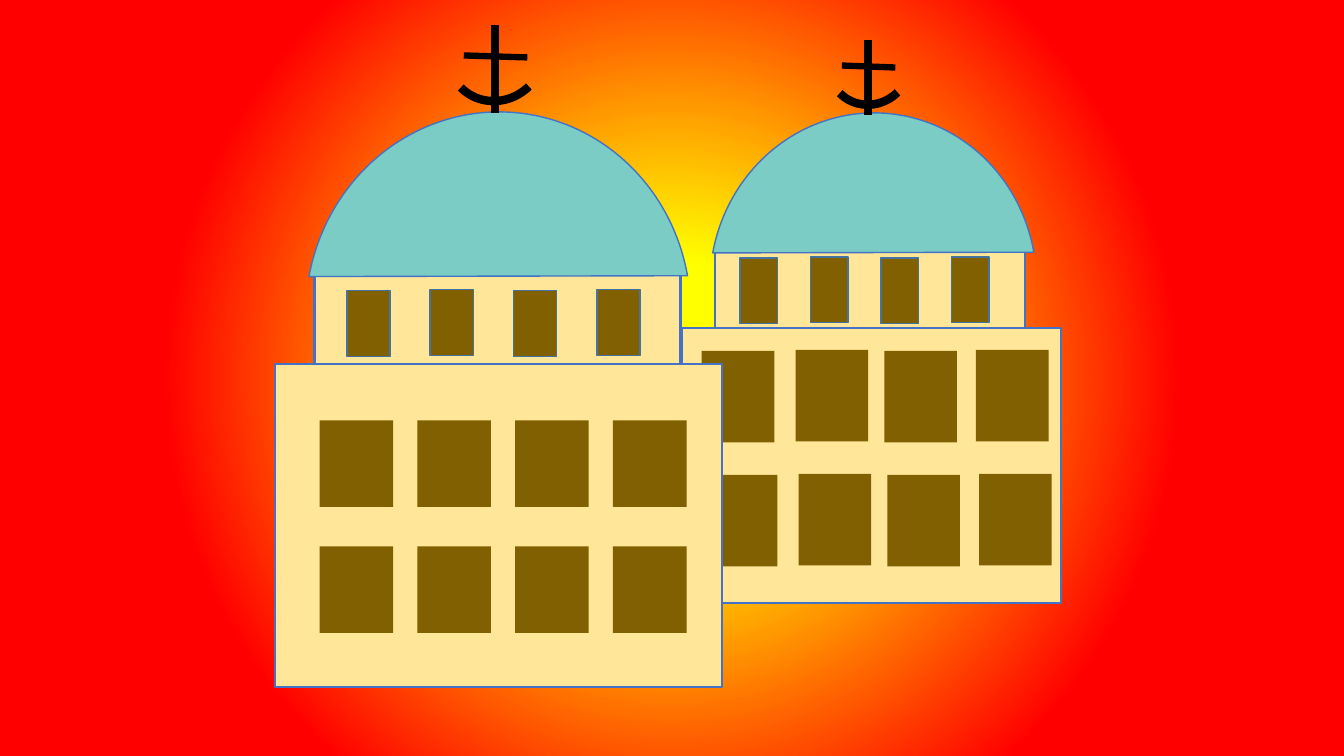
from lxml import etree
from pptx import Presentation
from pptx import util as u
from pptx.dml.color import RGBColor
from pptx.enum import shapes
from pptx.oxml.ns import qn

WALL, GLASS, DOME, BLACK = "FFE699", "806000", "7ACCC4", "000000"
EDGE, FRAME = "4472C4", "43739E"


def rgb(value):
    return RGBColor.from_string(value)


class Scene:
    def __init__(self, prs):
        self.s = prs.slides.add_slide(prs.slide_layouts[6])
        self.grp = None

    def sky(self, stops):
        fill = self.s.background.fill
        fill.gradient()
        for stop, (position, color) in zip(fill.gradient_stops, stops):
            stop.position = position
            stop.color.rgb = rgb(color)
        lin = self.s.element.find(".//" + qn("a:lin"))
        circle = etree.Element(qn("a:path"), {"path": "circle"})
        etree.SubElement(circle, qn("a:fillToRect"), dict.fromkeys("ltrb", "50000"))
        lin.getparent().replace(lin, circle)

    def group(self):
        self.grp = self.s.shapes.add_group_shape().shapes

    def outline(self, line, color, width):
        line.color.rgb = rgb(color)
        line.width = u.Pt(width)

    def shape(self, kind, box, fill=None, line=None, adj=(), **fmt):
        sp = self.grp.add_shape(kind, *map(u.Inches, box))
        sp.shadow.inherit = False
        if fill:
            sp.fill.solid()
            sp.fill.fore_color.rgb = rgb(fill)
        else:
            sp.fill.background()
        if line:
            self.outline(sp.line, *line)
        else:
            sp.line.fill.background()
        for i, value in enumerate(adj):
            sp.adjustments[i] = value
        for name, value in fmt.items():
            setattr(sp, name, value)
        return sp

    def rect(self, box, fill, line=None):
        return self.shape(shapes.MSO_SHAPE.RECTANGLE, box, fill, line)

    def line(self, points, width):
        cx = self.grp.add_connector(shapes.MSO_CONNECTOR.STRAIGHT, *map(u.Inches, points))
        self.outline(cx.line, BLACK, width)
        etree.SubElement(cx._element.spPr, qn("a:effectLst"))
        return cx

    def windows(self, places, size, line=None):
        for place in places:
            self.rect((*place, *size), GLASS, line)

    def anchor(self, mast, bar, arc):
        self.line(mast, 6)
        self.line(bar, 4.5)
        self.shape(shapes.MSO_SHAPE.ARC, arc, line=(BLACK, 6), rotation=135.6)

    def church(self, drum, body, dome, small, small_size, large, large_size, anchor):
        self.group()
        for box in (drum, body):
            self.rect(box, WALL, (EDGE, 1.5))
        self.shape(shapes.MSO_SHAPE.CHORD, dome, DOME, (EDGE, 1),
                   adj=(58.585, 153.199), rotation=93.4)
        self.windows(small, small_size, (FRAME, 1))
        self.windows(large, large_size)
        self.anchor(*anchor)


def main():
    prs = Presentation()
    prs.slide_width, prs.slide_height = u.Inches(13.33), u.Inches(7.5)
    scene = Scene(prs)
    scene.sky([(0.15, "FFFF00"), (0.66, "FF0000")])

    rear_row = [(6.96, 3.48), (7.89, 3.47), (8.77, 3.48), (9.68, 3.47)]
    scene.church(
        drum=(7.09, 2.5, 3.08, 0.87),
        body=(6.76, 3.25, 3.76, 2.73),
        dome=(6.96, 1.2, 3.4, 3.24),
        small=[(7.34 + 0.7 * i, 2.56 - 0.01 * (i % 2)) for i in range(4)],
        small_size=(0.37, 0.65),
        large=[(x + dx, y + dy) for dx, dy in ((0, 0), (0.03, 1.23)) for x, y in rear_row],
        large_size=(0.72, 0.91),
        anchor=((8.61, 0.4, 8.61, 1.14), (8.88, 0.67, 8.35, 0.65), (8.21, 0.24, 0.83, 0.79)),
    )
    scene.church(
        drum=(3.12, 2.73, 3.63, 1.02),
        body=(2.73, 3.61, 4.43, 3.21),
        dome=(2.94, 1.2, 4, 3.82),
        small=[(3.44 + 2.48 * i / 3, 2.88 - 0.01 * (i % 2)) for i in range(4)],
        small_size=(0.43, 0.66),
        large=[(3.17 + 0.97 * i, y) for y in (4.17, 5.42) for i in range(4)],
        large_size=(0.73, 0.86),
        anchor=((4.91, 0.25, 4.91, 1.12), (5.23, 0.57, 4.6, 0.55), (4.43, 0.06, 0.98, 0.93)),
    )
    prs.save("out.pptx")


if __name__ == "__main__":
    main()
